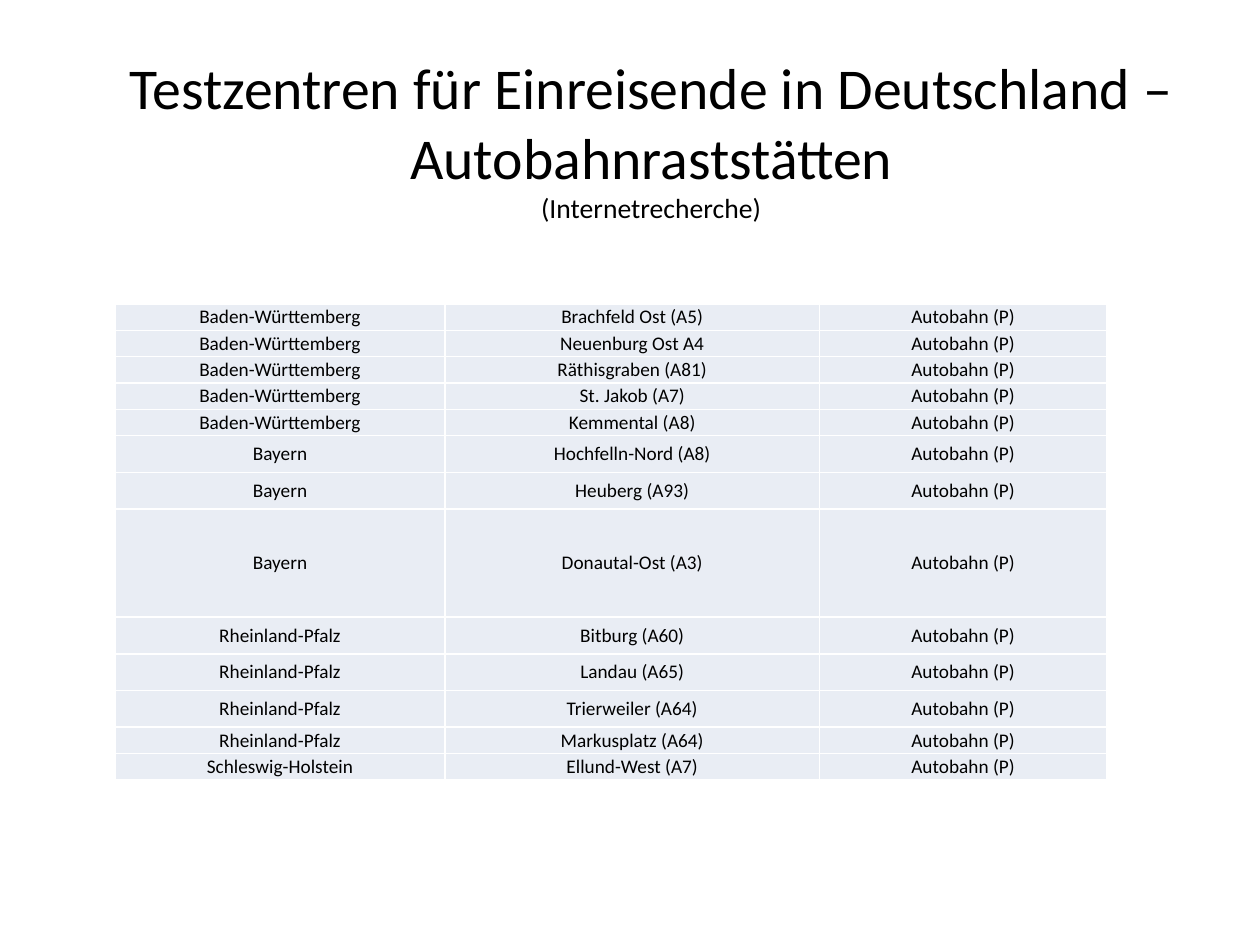
"""Build a slide listing the motorway test centres for travellers entering Germany."""
from dataclasses import dataclass

from pptx import Presentation
from pptx.dml.color import RGBColor
from pptx.enum.text import MSO_ANCHOR as Anchor, MSO_AUTO_SIZE as AutoSize, PP_ALIGN as Align
from pptx.util import Cm, Pt


@dataclass(frozen=True)
class Theme:
    font: str = "Calibri"
    text: RGBColor = RGBColor(0x00, 0x00, 0x00)
    cell: RGBColor = RGBColor(0xE9, 0xED, 0xF4)
    title_size: float = 33
    subtitle_size: float = 15.8
    cell_size: float = 11


theme = Theme()


def style_paragraph(paragraph, size):
    paragraph.alignment = Align.CENTER
    paragraph.font.name = theme.font
    paragraph.font.size = Pt(size)
    paragraph.font.color.rgb = theme.text


LOW, MEDIUM, HIGH = Cm(0.53), Cm(0.74), Cm(2.18)
centres = [
    ("Baden-Württemberg", "Brachfeld Ost (A5)", LOW),
    ("Baden-Württemberg", "Neuenburg Ost A4", LOW),
    ("Baden-Württemberg", "Räthisgraben (A81)", LOW),
    ("Baden-Württemberg", "St. Jakob (A7)", LOW),
    ("Baden-Württemberg", "Kemmental (A8)", LOW),
    ("Bayern", "Hochfelln-Nord (A8)", MEDIUM),
    ("Bayern", "Heuberg (A93)", MEDIUM),
    ("Bayern", "Donautal-Ost (A3)", HIGH),
    ("Rheinland-Pfalz", "Bitburg (A60)", MEDIUM),
    ("Rheinland-Pfalz", "Landau (A65)", MEDIUM),
    ("Rheinland-Pfalz", "Trierweiler (A64)", MEDIUM),
    ("Rheinland-Pfalz", "Markusplatz (A64)", LOW),
    ("Schleswig-Holstein", "Ellund-West (A7)", LOW),
]
location_type = "Autobahn (P)"
column_widths = [Cm(6.65), Cm(7.55), Cm(5.79)]

presentation = Presentation()
presentation.slide_width, presentation.slide_height = Cm(25.4), Cm(19.05)
slide = presentation.slides.add_slide(presentation.slide_layouts[5])

title = slide.shapes.title
title.left, title.top, title.width, title.height = Cm(1.7), Cm(1.19), Cm(22.86), Cm(3.18)
heading = title.text_frame
heading.text = "Testzentren für Einreisende in Deutschland –Autobahnraststätten\n(Internetrecherche)"
heading.word_wrap = True
heading.auto_size = AutoSize.NONE
heading.vertical_anchor = Anchor.MIDDLE
for paragraph, size in zip(heading.paragraphs, (theme.title_size, theme.subtitle_size)):
    style_paragraph(paragraph, size)

overview = slide.shapes.add_table(
    len(centres), len(column_widths), Cm(2.32), Cm(6.13),
    sum(column_widths), sum(height for _, _, height in centres),
).table
overview.first_row = False
overview.horz_banding = False
for column, width in zip(overview.columns, column_widths):
    column.width = width

for row, (state, rest_area, height) in zip(overview.rows, centres):
    row.height = height
    for cell, wording in zip(row.cells, (state, rest_area, location_type)):
        cell.text = wording
        cell.vertical_anchor = Anchor.MIDDLE
        cell.margin_left = cell.margin_right = cell.margin_top = cell.margin_bottom = 0
        cell.fill.solid()
        cell.fill.fore_color.rgb = theme.cell
        style_paragraph(cell.text_frame.paragraphs[0], theme.cell_size)

presentation.save("out.pptx")
